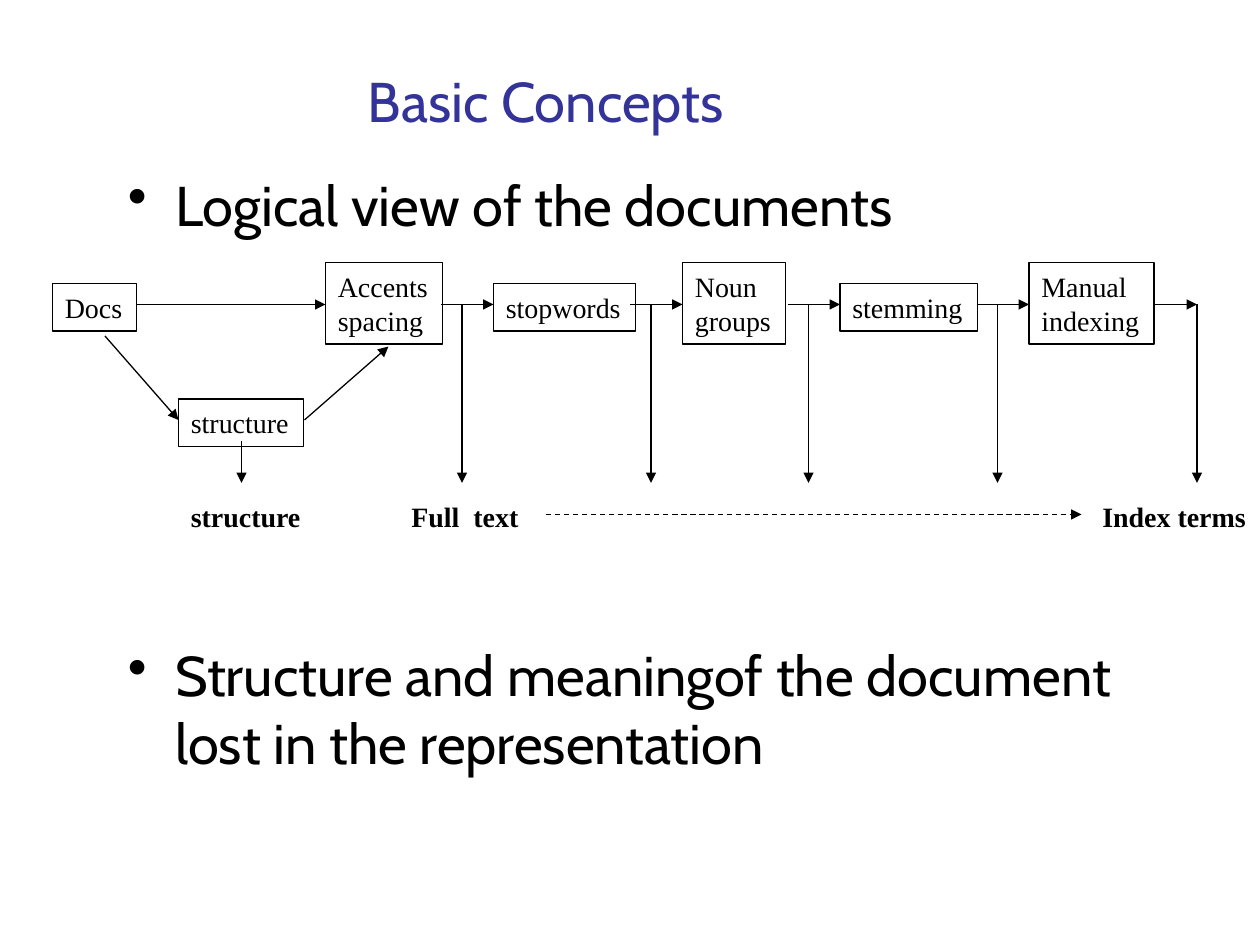
from lxml.etree import SubElement
from pptx import Presentation
from pptx.dml.color import RGBColor
from pptx.enum.dml import MSO_LINE
from pptx.enum.shapes import MSO_CONNECTOR, MSO_SHAPE
from pptx.enum.text import MSO_ANCHOR, MSO_AUTO_SIZE, PP_ALIGN
from pptx.oxml.ns import qn
from pptx.util import Pt


def color(hex_value):
    return RGBColor.from_string(hex_value)


class SlideBuilder:
    heading_font = "Cabin"
    diagram_font = "Times New Roman"
    ink = "000000"
    accent = "333399"

    def __init__(self, slide):
        self.slide = slide

    def style(self, paragraph, font_name, size, font_color, bold=False):
        paragraph.font.name = font_name
        paragraph.font.size = Pt(size)
        paragraph.font.bold = bold
        paragraph.font.color.rgb = color(font_color)

    def title(self, text, left, top, width, height):
        title = self.slide.shapes.title
        title.left, title.top, title.width, title.height = map(
            Pt, (left, top, width, height))
        frame = title.text_frame
        frame.text = text
        frame.auto_size = MSO_AUTO_SIZE.NONE
        frame.vertical_anchor = MSO_ANCHOR.MIDDLE
        paragraph = frame.paragraphs[0]
        paragraph.alignment = PP_ALIGN.CENTER
        self.style(paragraph, self.heading_font, 32, self.accent)

    def bullets(self, items, left, top, width, height, gap, indent=27):
        shape = self.slide.shapes.add_textbox(*map(Pt, (left, top, width, height)))
        frame = shape.text_frame
        frame.word_wrap = True
        frame.text = "\n".join(items)
        for index, paragraph in enumerate(frame.paragraphs):
            self.style(paragraph, self.heading_font, 32, self.ink)
            paragraph.space_before = Pt(gap if index else 0)
            properties = paragraph._p.get_or_add_pPr()
            properties.set("marL", str(Pt(indent)))
            properties.set("indent", str(-Pt(indent)))
            SubElement(properties, qn("a:buChar")).set("char", "•")

    def diagram_text(self, shape, text, bold=False):
        frame = shape.text_frame
        frame.word_wrap = False
        frame.auto_size = MSO_AUTO_SIZE.SHAPE_TO_FIT_TEXT
        frame.text = text
        for paragraph in frame.paragraphs:
            paragraph.alignment = PP_ALIGN.LEFT
            self.style(paragraph, self.diagram_font, 16, self.ink, bold)

    def box(self, text, left, top, width, height):
        shape = self.slide.shapes.add_shape(
            MSO_SHAPE.RECTANGLE, *map(Pt, (left, top, width, height)))
        shape.shadow.inherit = False
        shape.fill.background()
        shape.line.color.rgb = color(self.ink)
        shape.line.width = Pt(0.75)
        self.diagram_text(shape, text)

    def label(self, text, left, top, width, height):
        shape = self.slide.shapes.add_textbox(*map(Pt, (left, top, width, height)))
        self.diagram_text(shape, text, bold=True)

    def arrow(self, x1, y1, x2, y2, dashed=False):
        connector = self.slide.shapes.add_connector(
            MSO_CONNECTOR.STRAIGHT, *map(Pt, (x1, y1, x2, y2)))
        connector.line.color.rgb = color(self.ink)
        connector.line.width = Pt(0.75)
        if dashed:
            connector.line.dash_style = MSO_LINE.DASH
        SubElement(connector.line._get_or_add_ln(), qn("a:tailEnd")).set("type", "triangle")
        SubElement(connector._element.spPr, qn("a:effectLst"))


def main():
    presentation = Presentation()
    presentation.slide_width, presentation.slide_height = Pt(720), Pt(540)
    slide = presentation.slides.add_slide(presentation.slide_layouts[5])
    builder = SlideBuilder(slide)

    # Title and bullets, with room for the diagram between them
    builder.title("Basic Concepts", 72, 30, 480, 54)
    builder.bullets(
        ["Logical view of the documents",
         "Structure and meaningof the document lost in the representation"],
        66, 93.6, 588, 356, gap=230.7)

    # Processing steps
    flow_y, output_y = 174, 276
    one_line, two_lines = (162, 27.2), (150, 46.6)
    steps = [
        ("Docs", 30, 48.2, one_line),
        ("Accents\nspacing", 186, 67, two_lines),
        ("stopwords", 282, 81.4, one_line),
        ("Noun\ngroups", 390, 59, two_lines),
        ("stemming", 480, 78.8, one_line),
        ("Manual\nindexing", 588, 71.4, two_lines),
        ("structure", 102, 71.4, (228, 27.2)),
    ]
    for text, left, width, (top, height) in steps:
        builder.box(text, left, top, width, height)

    # Arrows along the flow
    for start, end in [(78, 186), (252, 282), (360, 390), (450, 480),
                       (558, 588), (660, 684)]:
        builder.arrow(start, flow_y, end, flow_y)

    # Detour through structure
    builder.arrow(60, 192, 102, 240)
    builder.arrow(174, 240, 222, 198)
    builder.arrow(138, 252, 138, output_y)

    # Arrows down to the outputs
    for x in (264, 372, 462, 570, 684):
        builder.arrow(x, flow_y, x, output_y)

    # Outputs
    for text, left, width in [("structure", 102, 77.6), ("Full  text", 228, 76),
                              ("Index terms", 622.8, 97.2)]:
        builder.label(text, left, 282, width, 26.6)
    builder.arrow(312, 294, 618, 294, dashed=True)

    presentation.save("out.pptx")


if __name__ == "__main__":
    main()
